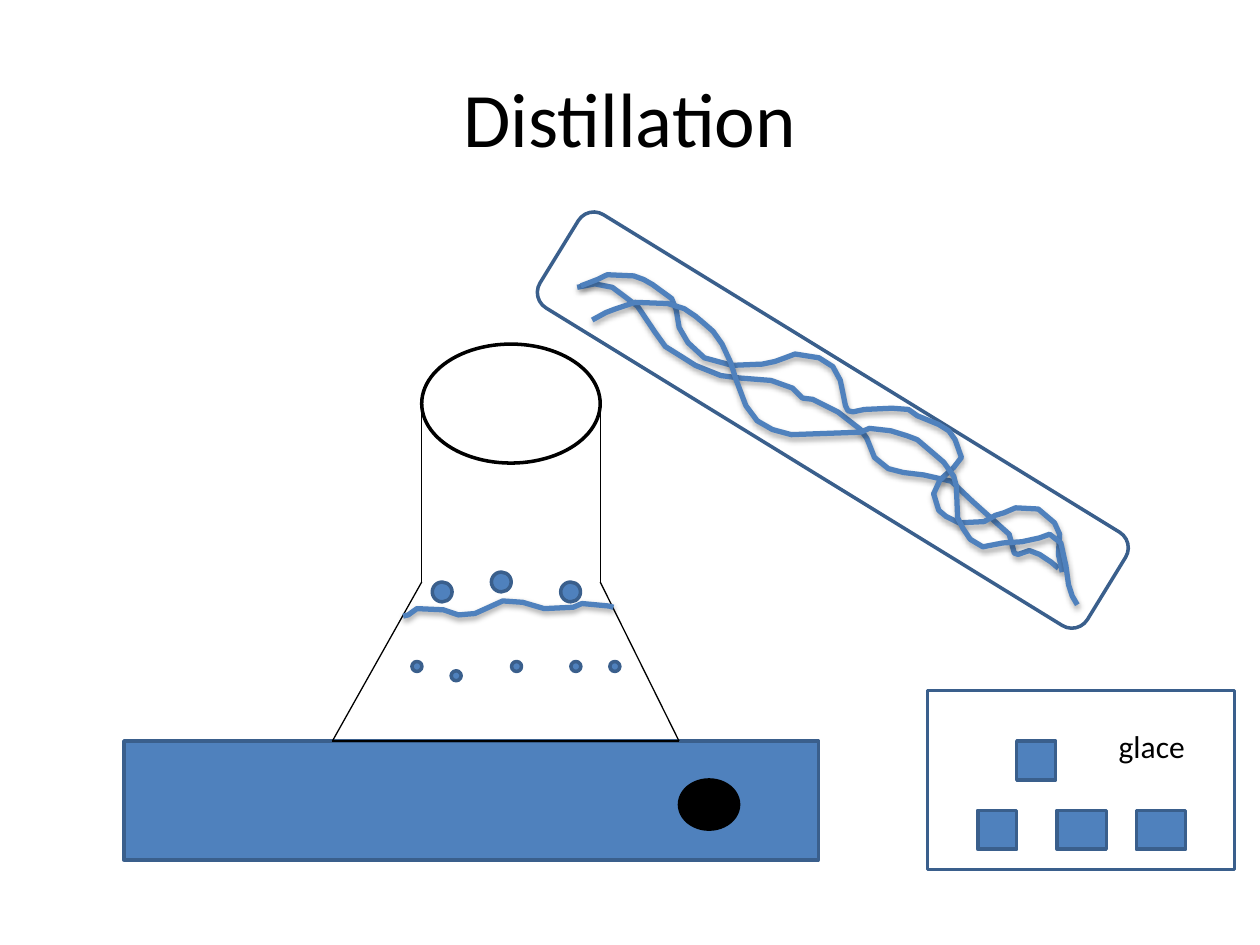
"""Build the distillation diagram slide."""
from dataclasses import dataclass
from itertools import pairwise

from lxml.etree import SubElement
from pptx import Presentation
from pptx.dml.color import RGBColor
from pptx.enum.shapes import MSO_CONNECTOR, MSO_SHAPE
from pptx.enum.text import MSO_ANCHOR, PP_ALIGN
from pptx.oxml.ns import qn
from pptx.util import Pt


@dataclass(frozen=True)
class Theme:
    font: str = "Calibri"
    ink: RGBColor = RGBColor(0, 0, 0)
    blue: RGBColor = RGBColor(0x4F, 0x81, 0xBD)
    edge: RGBColor = RGBColor(0x3A, 0x5F, 0x8C)
    title_size: int = 44
    label_size: int = 18
    thin: float = 0.75
    outline: float = 2
    stroke: float = 3


THEME = Theme()

NECK_LEFT, NECK_RIGHT = 241, 343
BASE_LEFT, BASE_RIGHT = 190, 388
NECK_TOP, SHOULDER, STOVE_TOP = 236, 332.6, 423.4

SMALL_BUBBLES = [(235.4, 378), (257.8, 383.3), (292.3, 378), (326.2, 378), (348.5, 378)]
LARGE_BUBBLES = [(247, 332.6), (280.8, 326.9), (320.4, 332.6)]
ICE_CUBES = [(558.7, 463, 22.3), (604.1, 463, 28.1), (649.4, 463, 28.1), (581, 423.4, 22.3)]

WATER_SURFACE = [
    (230.4, 352.1), (233.3, 351.4), (238.3, 347.8), (253.4, 348.5), (262, 351.4),
    (271.4, 350.6), (279.4, 347), (287.3, 343.4), (298.8, 344.2), (311, 347.8),
    (327.6, 347), (332.6, 344.9), (347.8, 346.3), (350.6, 347),
]
MIDDLE_COIL = [
    (329.8, 164.2), (339.8, 162.2), (349.9, 164.2), (355.7, 168.5), (364.3, 175),
    (374.4, 190), (380.2, 198), (389.5, 203.8), (397.4, 208.8), (411.8, 214.6),
    (422.6, 216), (440.6, 217.4), (452.9, 221.8), (458.6, 227.5), (464.4, 228.2),
    (478.8, 235.4), (491.8, 245.5), (495.4, 250.6), (499.7, 261.4), (507.6, 267.8),
    (516.2, 270), (527.8, 271.4), (543.6, 275), (555.8, 286.6), (576.7, 305.3),
    (579.6, 316.1), (581.8, 316.8), (588.2, 314.6), (594, 316.8), (600.5, 321.1),
    (604.8, 324.7),
]
UPPER_COIL = [
    (331.9, 163.4), (341.3, 159.8), (347, 157), (362.2, 157.7), (367.9, 159.8),
    (373, 162.7), (383.8, 170.6), (386.4, 177), (388.1, 187.2), (393.1, 195.8),
    (402.5, 204.5), (418.3, 208.8), (435.6, 208.1), (442.8, 206.6), (448.6, 204.5),
    (454.3, 202.3), (468, 204.5), (475.9, 209.5), (480.2, 217.4), (483.1, 231.8),
    (484.6, 234.7), (487.4, 235.4), (493.9, 234), (509.8, 233.3), (519.1, 234),
    (524.2, 237.6), (536.4, 242.6), (542.2, 246.2), (545.8, 251.3), (549.4, 261.4),
    (545, 267.1), (537.1, 274.3), (533.5, 282.2), (536.4, 291.6), (540.7, 295.2),
    (547.9, 298.8), (562.3, 298.1), (568.8, 294.5), (573.8, 293), (580.3, 290.2),
    (593.3, 290.9), (602.6, 298.8), (605.5, 305.3), (604.8, 316.8), (607, 326.9),
]
LOWER_COIL = [
    (338.4, 182.9), (346.3, 178.6), (352.1, 176.4), (362.9, 172.8), (381.6, 173.5),
    (391, 176.4), (397.4, 180.7), (402.5, 185), (407.5, 189.4), (412.6, 196.6),
    (417.6, 207.4), (420.5, 216.7), (426.2, 231.8), (432.7, 240.5), (441.4, 245.5),
    (452.2, 248.4), (491.8, 247), (496.8, 244.8), (509, 246.2), (518.4, 249.1),
    (524.2, 251.3), (533.5, 259.2), (539.3, 264.2), (545, 272.2), (546.5, 277.9),
    (547.2, 295.9), (550.1, 301.7), (554.4, 308.2), (561.6, 312.5), (573.1, 310.3),
    (583.9, 309.6), (594, 307.4), (599.8, 305.3), (606.2, 310.3), (609.1, 323.3),
    (610.6, 334.1), (612.7, 340.6), (615.6, 345.6),
]


def place(item, left, top, width, height):
    item.left, item.top, item.width, item.height = map(Pt, (left, top, width, height))


def format_text(paragraph, size):
    paragraph.font.name = THEME.font
    paragraph.font.size = Pt(size)
    paragraph.font.color.rgb = THEME.ink


def set_title(slide, text):
    title = slide.shapes.title
    place(title, 36, 21.6, 648, 90)
    title.text_frame.text = text
    title.text_frame.vertical_anchor = MSO_ANCHOR.MIDDLE
    heading = title.text_frame.paragraphs[0]
    heading.alignment = PP_ALIGN.CENTER
    format_text(heading, THEME.title_size)


def add_label(slide, text, *box):
    label = slide.shapes.add_textbox(*map(Pt, box))
    label.text_frame.word_wrap = False
    label.text_frame.text = text
    format_text(label.text_frame.paragraphs[0], THEME.label_size)


def add_part(slide, kind, *box, fill=None, edge=THEME.edge):
    part = slide.shapes.add_shape(kind, *map(Pt, box))
    part.shadow.inherit = False
    if fill is None:
        part.fill.background()
    else:
        part.fill.solid()
        part.fill.fore_color.rgb = fill
    part.line.color.rgb = edge
    part.line.width = Pt(THEME.outline)
    return part


def add_wall(slide, start, end):
    wall = slide.shapes.add_connector(MSO_CONNECTOR.STRAIGHT, *map(Pt, (*start, *end)))
    wall.line.color.rgb = THEME.ink
    wall.line.width = Pt(THEME.thin)
    SubElement(wall._element.spPr, qn("a:effectLst"))


def add_wave(slide, points):
    start, *rest = [(Pt(x), Pt(y)) for x, y in points]
    builder = slide.shapes.build_freeform(*start)
    builder.add_line_segments(rest, close=False)
    wave = builder.convert_to_shape()
    wave.fill.background()
    wave.line.color.rgb = THEME.blue
    wave.line.width = Pt(THEME.stroke)


def add_bubbles(slide, corners, diameter):
    for left, top in corners:
        add_part(slide, MSO_SHAPE.OVAL, left, top, diameter, diameter, fill=THEME.blue)


def add_stove(slide):
    add_part(slide, MSO_SHAPE.RECTANGLE, 70.9, STOVE_TOP, 396.8, 68, fill=THEME.blue)
    add_part(slide, MSO_SHAPE.OVAL, 388.3, 445.7, 33.8, 28.1, fill=THEME.ink, edge=THEME.ink)


def add_flask(slide):
    outline = [
        (NECK_LEFT, NECK_TOP), (NECK_LEFT, SHOULDER), (BASE_LEFT, STOVE_TOP),
        (BASE_RIGHT, STOVE_TOP), (NECK_RIGHT, SHOULDER), (NECK_RIGHT, NECK_TOP),
    ]
    for start, end in pairwise(outline):
        add_wall(slide, start, end)
    add_wave(slide, WATER_SURFACE)
    add_bubbles(slide, SMALL_BUBBLES, 5.7)
    add_bubbles(slide, LARGE_BUBBLES, 11.3)
    add_part(slide, MSO_SHAPE.OVAL, NECK_LEFT, 196.6, NECK_RIGHT - NECK_LEFT, 68, edge=THEME.ink)


def add_condenser(slide):
    tube = add_part(slide, MSO_SHAPE.ROUNDED_RECTANGLE, 292.3, 208.8, 367.2, 62.6)
    tube.rotation = 31.6
    for coil in (MIDDLE_COIL, UPPER_COIL, LOWER_COIL):
        add_wave(slide, coil)


def add_ice_box(slide):
    add_part(slide, MSO_SHAPE.RECTANGLE, 529.9, 394.6, 175.7, 102.2)
    for left, top, width in ICE_CUBES:
        add_part(slide, MSO_SHAPE.RECTANGLE, left, top, width, 22.3, fill=THEME.blue)
    add_label(slide, "glace", 632.2, 411.8, 52.6, 28.8)


def main():
    deck = Presentation()
    deck.slide_width, deck.slide_height = Pt(720), Pt(540)
    slide = deck.slides.add_slide(deck.slide_layouts[5])
    set_title(slide, "Distillation")
    add_stove(slide)
    add_flask(slide)
    add_condenser(slide)
    add_ice_box(slide)
    deck.save("out.pptx")


if __name__ == "__main__":
    main()
